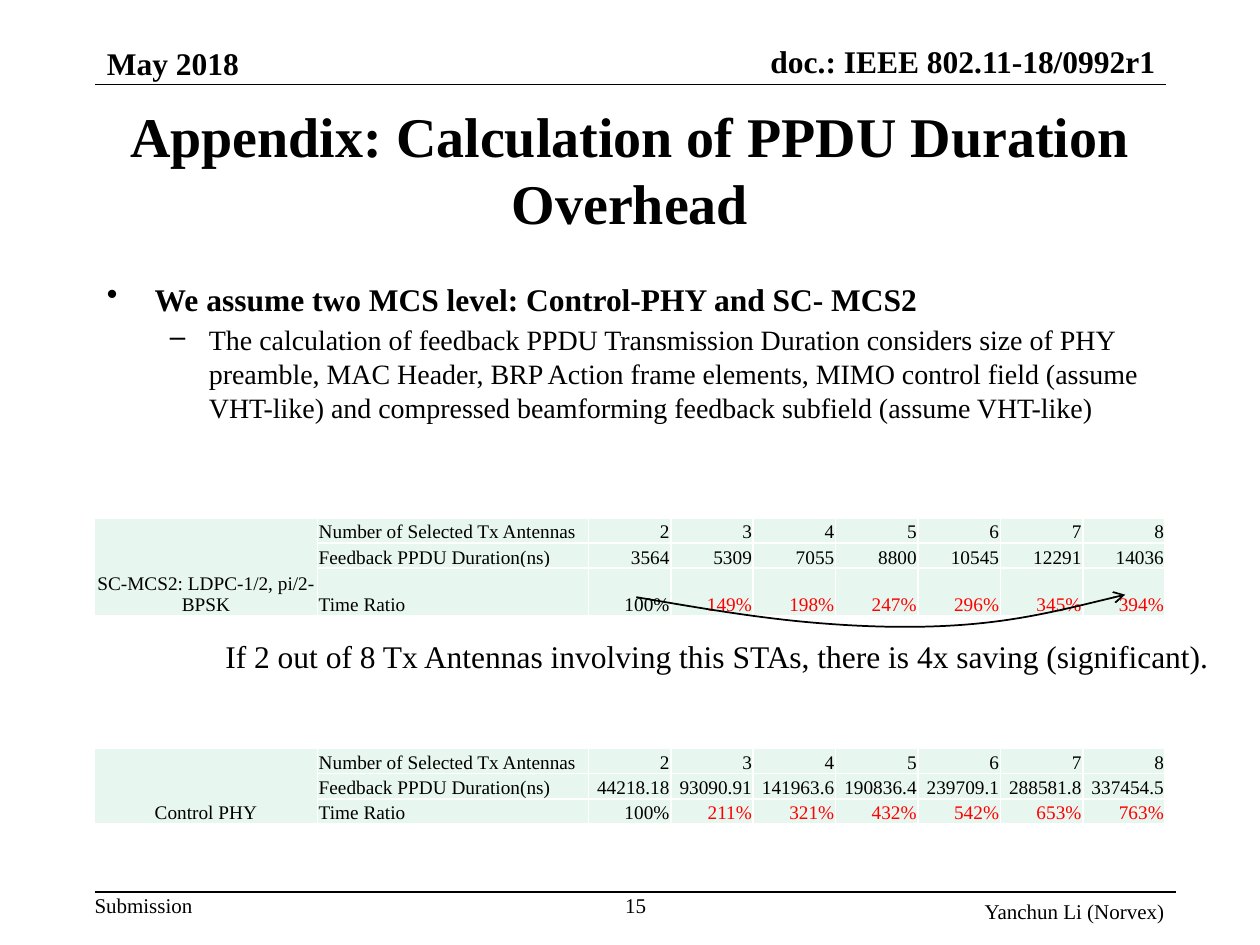
from lxml.etree import SubElement
from pptx import Presentation
from pptx.dml.color import RGBColor
from pptx.enum.text import MSO_ANCHOR as Anchor, MSO_AUTO_SIZE as AutoSize, PP_ALIGN as Align
from pptx.oxml.ns import qn
from pptx.util import Inches, Pt

FONT = "Times New Roman"
BLACK = RGBColor(0x00, 0x00, 0x00)
RED = RGBColor(0xFF, 0x00, 0x00)
WHITE = RGBColor(0xFF, 0xFF, 0xFF)
MINT = RGBColor(0xE7, 0xF6, 0xEF)

# Content
TITLE = "Appendix: Calculation of PPDU Duration Overhead"
BULLETS = [  # text, mark, size, bold, left margin, hanging indent
    ("We assume two MCS level: Control-PHY and SC- MCS2", "•", 18, True, 0.38, 0.38),
    ("The calculation of feedback PPDU Transmission Duration considers size of PHY "
     "preamble, MAC Header, BRP Action frame elements, MIMO control field (assume "
     "VHT-like) and compressed beamforming feedback subfield (assume VHT-like)",
     "–", 16, False, 0.81, 0.31),
]
ROW_LABELS = ["Number of Selected Tx Antennas", "Feedback PPDU Duration(ns)", "Time Ratio"]
ANTENNAS = ["2", "3", "4", "5", "6", "7", "8"]
TABLES = [  # top, scheme, durations, ratios
    (4.11, "SC-MCS2: LDPC-1/2, pi/2-BPSK",
     ["3564", "5309", "7055", "8800", "10545", "12291", "14036"],
     ["100%", "149%", "198%", "247%", "296%", "345%", "394%"]),
    (5.94, "Control PHY",
     ["44218.18", "93090.91", "141963.6", "190836.4", "239709.1", "288581.8", "337454.5"],
     ["100%", "211%", "321%", "432%", "542%", "653%", "763%"]),
]
TEXTS = [  # text, box, size, bold, alignment, anchor, insets (x, y), wrap
    ("doc.: IEEE 802.11-18/0992r1", (5.58, 0.33, 3.59, 0.3), 18, True,
     Align.RIGHT, Anchor.BOTTOM, (0, 0), True),
    ("May 2018", (0.75, 0.3, 1.27, 0.3), 18, True, Align.LEFT, Anchor.TOP, (0.1, 0.05), False),
    ("Submission", (0.75, 7.08, 0.79, 0.2), 12, False, Align.LEFT, Anchor.TOP, (0, 0), False),
    ("15", (4.75, 7.08, 0.59, 0.2), 12, False, Align.CENTER, Anchor.TOP, (0, 0), True),
    ("Yanchun Li (Norvex)", (6.83, 7.08, 2.51, 0.2), 12, False,
     Align.RIGHT, Anchor.TOP, (0.1, 0.05), True),
    ("If 2 out of 8 Tx Antennas involving this STAs, there is 4x saving (significant).",
     (1.69, 5.01, 8.09, 0.4), 18, False, Align.LEFT, Anchor.TOP, (0.1, 0.05), False),
]
RULES = [(0.75, 9.25, 0.67), (0.75, 9.33, 7.08)]  # left, right, height on page
CURVE = [  # start, then three Bezier points for each segment
    (5.05, 4.74),
    (5.52, 4.82), (5.98, 4.9), (6.43, 4.94),
    (6.88, 4.98), (7.33, 4.99), (7.75, 4.95),
    (8.17, 4.91), (8.55, 4.81), (8.93, 4.72),
]


def style(para, size, bold=False, color=BLACK, align=Align.LEFT):
    para.alignment = align
    para.font.name, para.font.size = FONT, Pt(size)
    para.font.bold, para.font.color.rgb = bold, color


def set_insets(target, left, top, right, bottom):
    target.margin_left, target.margin_top = Inches(left), Inches(top)
    target.margin_right, target.margin_bottom = Inches(right), Inches(bottom)


def add_text(page, text, area, size, bold, align, anchor, insets, wrap):
    frame = page.shapes.add_textbox(*map(Inches, area)).text_frame
    frame.word_wrap, frame.vertical_anchor = wrap, anchor
    set_insets(frame, *insets, *insets)
    frame.text = text
    style(frame.paragraphs[0], size, bold, align=align)


def add_bullets(page):
    frame = page.shapes.add_textbox(*map(Inches, (0.75, 2.17, 8.5, 4.5))).text_frame
    frame.word_wrap = True
    for index, (text, mark, size, bold, margin, hang) in enumerate(BULLETS):
        para = frame.paragraphs[0] if index == 0 else frame.add_paragraph()
        para.text, para.level = text, index
        style(para, size, bold)
        para.space_before = Pt(size * 0.2)
        props = para._p.get_or_add_pPr()
        props.set("marL", str(Inches(margin)))
        props.set("indent", str(-Inches(hang)))
        bullet = SubElement(props, qn("a:buChar"), char=mark)
        props.find(qn("a:defRPr")).addprevious(bullet)


def add_borders(cell):
    props = cell._tc.get_or_add_tcPr()
    for side in ("lnL", "lnR", "lnT", "lnB"):
        line = SubElement(props, qn(f"a:{side}"), w=str(Pt(1)))
        SubElement(SubElement(line, qn("a:solidFill")), qn("a:srgbClr"), val=str(WHITE))


def add_duration_table(page, top, scheme, durations, ratios):
    rows = [[scheme if i == 0 else "", label, *values] for i, (label, values)
            in enumerate(zip(ROW_LABELS, (ANTENNAS, durations, ratios)))]
    width, label_widths = 8.5, [1.77, 2.15]
    value_width = (width - sum(label_widths)) / len(ANTENNAS)
    table = page.shapes.add_table(len(rows), len(rows[0]), Inches(0.75), Inches(top),
                                  Inches(width), Inches(0.61)).table
    table.first_row = table.horz_banding = False
    for column, size in zip(table.columns, label_widths + [value_width] * len(ANTENNAS)):
        column.width = Inches(size)
    for r, row in enumerate(rows):
        table.rows[r].height = Inches(0.2)
        for c, text in enumerate(row):
            cell = table.cell(r, c)
            add_borders(cell)
            cell.fill.solid()
            cell.fill.fore_color.rgb = MINT
            cell.vertical_anchor = Anchor.BOTTOM
            set_insets(cell, 0.01, 0.01, 0.01, 0)
            cell.text = text
            align = (Align.CENTER, Align.LEFT)[c] if c < 2 else Align.RIGHT
            color = RED if r == 2 and c > 2 else BLACK
            style(cell.text_frame.paragraphs[0], 11, color=color, align=align)
    table.cell(0, 0).merge(table.cell(len(rows) - 1, 0))


def add_curved_arrow(page):
    points = [(Inches(x), Inches(y)) for x, y in CURVE]
    builder = page.shapes.build_freeform(*points[0])
    builder.add_line_segments(points[1:], close=False)
    arrow = builder.convert_to_shape()
    arrow.shadow.inherit = False
    arrow.fill.background()
    arrow.line.color.rgb, arrow.line.width = BLACK, Pt(1)
    # Turn every three straight steps into one cubic segment
    steps = list(arrow._element.iter(qn("a:lnTo")))
    for start in range(0, len(steps), 3):
        cubic = SubElement(steps[start].getparent(), qn("a:cubicBezTo"))
        for step in steps[start:start + 3]:
            cubic.append(step[0])
            step.getparent().remove(step)
    SubElement(arrow.line._get_or_add_ln(), qn("a:tailEnd"), type="arrow")


def add_rule(page, left, right, height):
    rule = page.shapes.add_connector(1, Inches(left), Inches(height),
                                     Inches(right), Inches(height))
    rule.line.color.rgb, rule.line.width = BLACK, Pt(1)
    SubElement(rule._element.spPr, qn("a:effectLst"))


def main():
    deck = Presentation()
    deck.slide_width, deck.slide_height = Inches(10), Inches(7.5)
    page = deck.slides.add_slide(deck.slide_layouts[5])

    # Title
    title = page.shapes.title
    title.left, title.top, title.width, title.height = map(Inches, (0.75, 0.75, 8.5, 1.17))
    title.text_frame.text = TITLE
    title.text_frame.auto_size = AutoSize.NONE
    title.text_frame.vertical_anchor = Anchor.MIDDLE
    style(title.text_frame.paragraphs[0], 32, True, align=Align.CENTER)

    # Body, header and footer
    for rule in RULES:
        add_rule(page, *rule)
    add_bullets(page)
    for table in TABLES:
        add_duration_table(page, *table)
    add_curved_arrow(page)
    for text in TEXTS:
        add_text(page, *text)
    deck.save("out.pptx")


if __name__ == "__main__":
    main()
